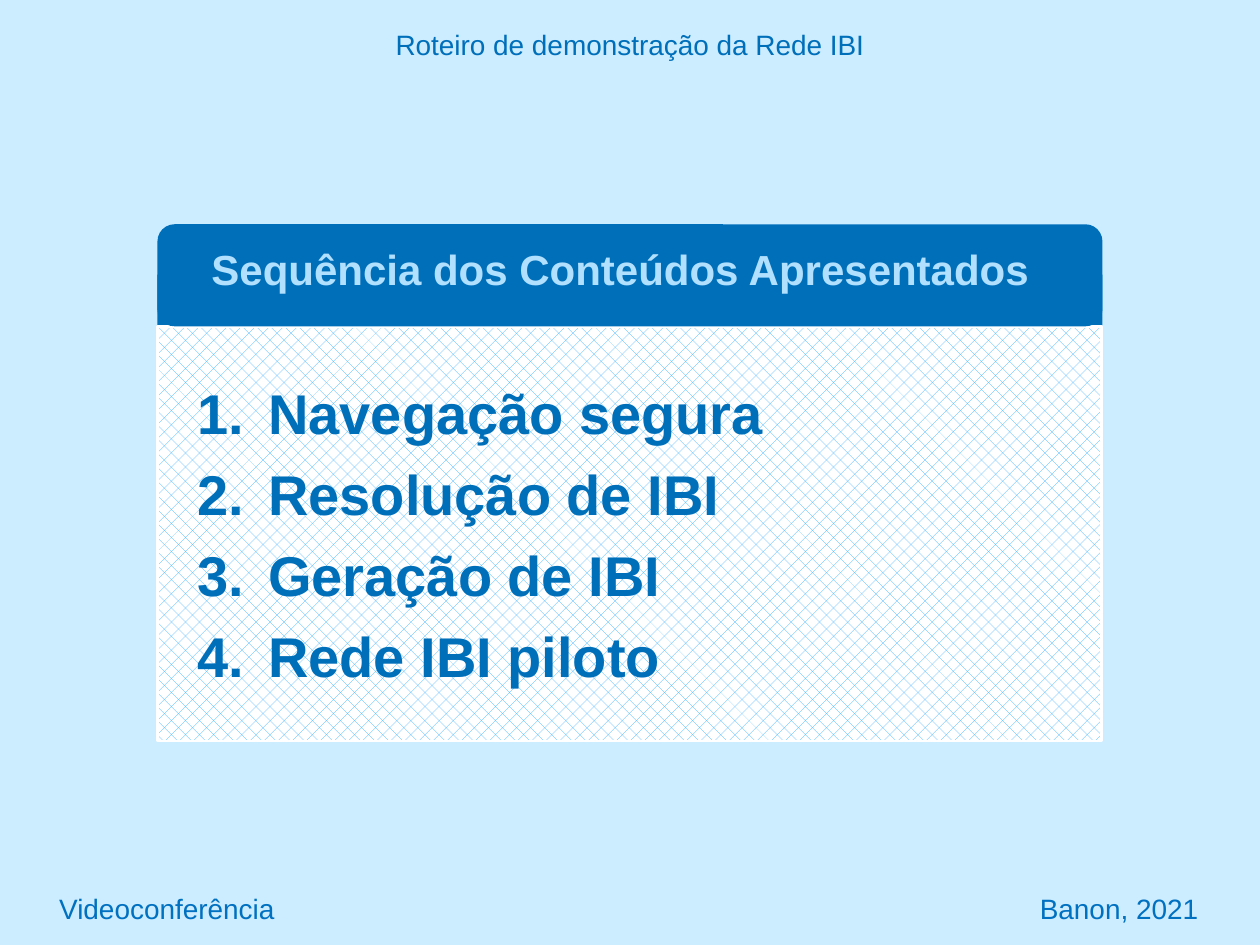
from dataclasses import dataclass

from lxml import etree
from pptx import Presentation
from pptx.dml.color import RGBColor
from pptx.enum import dml, shapes, text
from pptx.oxml import ns
from pptx.util import Inches, Pt

SKY = RGBColor(0xCC, 0xEC, 0xFF)
BLUE = RGBColor(0x00, 0x6F, 0xBA)
FOOT = RGBColor(0x00, 0x70, 0xC0)
PALE = RGBColor(0xB0, 0xE0, 0xFE)
MESH = RGBColor(0x3B, 0xB1, 0xFF)
WHITE = RGBColor(0xFF, 0xFF, 0xFF)

TOPICS = ["Navegação segura", "Resolução de IBI", "Geração de IBI", "Rede IBI piloto"]
MARGIN = 0.47


@dataclass
class Box:
    left: float
    top: float
    width: float
    height: float

    def place(self) -> list:
        return [Inches(v) for v in (self.left, self.top, self.width, self.height)]


@dataclass
class Style:
    size: int
    color: RGBColor
    bold: bool = False
    align: text.PP_ALIGN = text.PP_ALIGN.LEFT
    before: int = 0


def add_block(slide, kind, box: Box):
    shape = slide.shapes.add_shape(kind, *box.place())
    shape.shadow.inherit = False
    shape.fill.solid()
    shape.fill.fore_color.rgb = BLUE
    shape.line.fill.background()
    return shape


def format_par(par, style: Style) -> None:
    par.alignment = style.align
    par.space_before = Pt(style.before)
    font = par.font
    font.name, font.size, font.bold = "Arial", Pt(style.size), style.bold
    font.color.rgb = style.color


def add_label(slide, box: Box, words: str, style: Style):
    frame = slide.shapes.add_textbox(*box.place()).text_frame
    frame.word_wrap = True
    frame.text = words
    format_par(frame.paragraphs[0], style)
    return frame


def number_par(par) -> None:
    """Give a paragraph a hanging automatic number."""
    props = par._p.get_or_add_pPr()
    props.set("marL", str(Inches(0.78)))
    props.set("indent", str(Inches(-0.56)))
    etree.SubElement(props, ns.qn("a:buFont"), typeface="+mj-lt")
    etree.SubElement(props, ns.qn("a:buAutoNum"), type="arabicPeriod")


def add_list(slide) -> None:
    panel = add_block(slide, shapes.MSO_SHAPE.RECTANGLE, Box(1.25, 2.59, 7.49, 3.29))
    panel.fill.patterned()
    panel.fill.pattern = dml.MSO_PATTERN.PERCENT_25
    panel.fill.fore_color.rgb = MESH
    panel.fill.back_color.rgb = WHITE
    panel.line.color.rgb = WHITE
    panel.line.width = Pt(1.5)
    frame = panel.text_frame
    frame.vertical_anchor = text.MSO_ANCHOR.MIDDLE
    frame.text = "\n".join(TOPICS)
    for par in frame.paragraphs:
        number_par(par)
        format_par(par, Style(32, BLUE, bold=True, before=8))


def add_header(slide) -> None:
    add_block(slide, shapes.MSO_SHAPE.RECTANGLE, Box(1.25, 2.18, 7.5, 0.4))
    top = add_block(slide, shapes.MSO_SHAPE.ROUNDED_RECTANGLE, Box(1.25, 1.78, 7.5, 0.81))
    top.adjustments[0] = 0.167
    add_label(slide, Box(1.58, 1.88, 6.75, 0.5), "Sequência dos Conteúdos Apresentados",
              Style(24, PALE, bold=True, before=4))


def add_footer(slide) -> None:
    """Write both footer texts on one line, the second at a right tab."""
    frame = add_label(slide, Box(0, 7, 10, 0.42), "Videoconferência\tBanon, 2021", Style(16, FOOT))
    frame.vertical_anchor = text.MSO_ANCHOR.MIDDLE
    frame.margin_left = Inches(MARGIN)
    tabs = etree.Element(ns.qn("a:tabLst"))
    etree.SubElement(tabs, ns.qn("a:tab"), pos=str(Inches(9.51 - MARGIN)), algn="r")
    props = frame.paragraphs[0]._p.get_or_add_pPr()
    props.find(ns.qn("a:defRPr")).addprevious(tabs)


def main() -> None:
    deck = Presentation()
    deck.slide_width, deck.slide_height = Inches(10), Inches(7.5)
    slide = deck.slides.add_slide(deck.slide_layouts[6])
    slide.background.fill.solid()
    slide.background.fill.fore_color.rgb = SKY
    add_list(slide)
    add_header(slide)
    add_label(slide, Box(0, 0.17, 10, 0.37), "Roteiro de demonstração da Rede IBI",
              Style(16, BLUE, align=text.PP_ALIGN.CENTER))
    add_footer(slide)
    deck.save("out.pptx")


if __name__ == "__main__":
    main()
